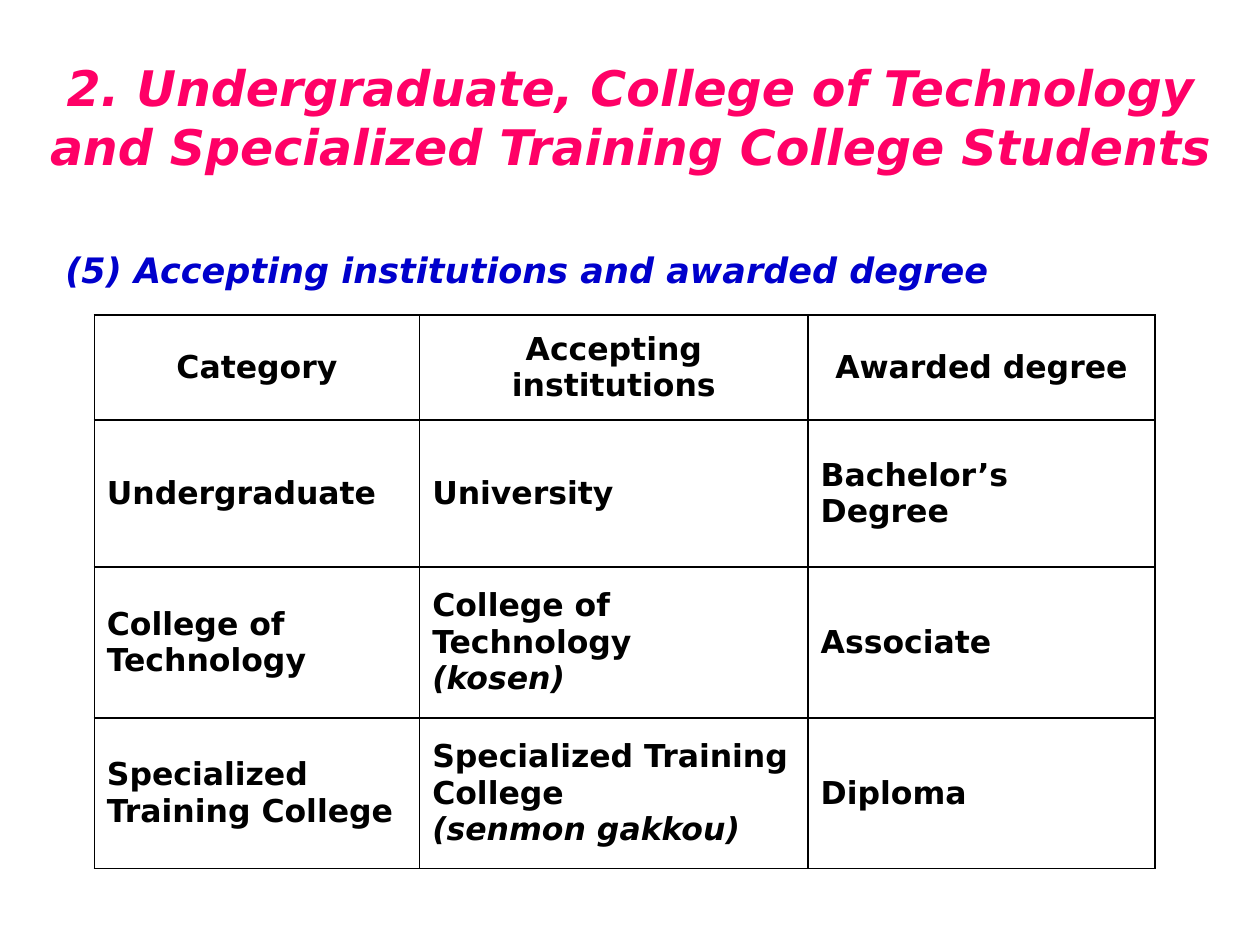
"""Build a slide listing accepting institutions and the degrees they award."""
from dataclasses import dataclass

from lxml.etree import SubElement
from pptx import Presentation
from pptx.dml.color import RGBColor
from pptx.enum.text import MSO_ANCHOR as Anchor, PP_ALIGN as Align
from pptx.oxml.ns import qn
from pptx.util import Cm, Pt

FONT = "DejaVu Sans"
COLUMN_WIDTHS = (6.56, 7.83, 6.99)
ROW_HEIGHTS = (2.12, 2.96, 3.04, 3.04)
ROWS = (
    ("Category", "Accepting institutions", "Awarded degree"),
    ("Undergraduate", "University", "Bachelor’s Degree"),
    ("College of Technology", "College of Technology\n(kosen)", "Associate"),
    ("Specialized Training College",
     "Specialized Training College\n(senmon gakkou)", "Diploma"),
)


@dataclass(frozen=True)
class Heading:
    text: str
    left: float
    top: float
    width: float
    height: float
    size: int
    color: str
    align: Align = Align.LEFT
    anchor: Anchor = Anchor.TOP
    space_before: float = 0
    hanging: float = 0


HEADINGS = (
    Heading("(5) Accepting institutions and awarded degree",
            1.07, 4.88, 23.7, 1.7, 20, "0000CC", space_before=4, hanging=0.95),
    Heading("2. Undergraduate, College of Technology "
            "and Specialized Training College Students",
            0.64, 0.76, 24.13, 3.18, 28, "FF0066", Align.CENTER, Anchor.MIDDLE),
)


def write(para, text: str, size: int, color: str, italic: bool) -> None:
    span = para.add_run()
    span.text = text
    formats = {"name": FONT, "size": Pt(size), "bold": True, "italic": italic}
    for name, value in formats.items():
        setattr(span.font, name, value)
    span.font.color.rgb = RGBColor.from_string(color)


def draw_heading(page, heading: Heading) -> None:
    box = page.shapes.add_textbox(Cm(heading.left), Cm(heading.top),
                                  Cm(heading.width), Cm(heading.height))
    frame = box.text_frame
    frame.word_wrap = True
    frame.vertical_anchor = heading.anchor
    para = frame.paragraphs[0]
    para.alignment = heading.align
    para.space_before = Pt(heading.space_before)
    if heading.hanging:
        properties = para._p.get_or_add_pPr()
        properties.set("marL", str(Cm(heading.hanging)))
        properties.set("indent", str(-Cm(heading.hanging)))
    write(para, heading.text, heading.size, heading.color, True)


def draw_borders(cell, color: str, width: float) -> None:
    properties = cell._tc.get_or_add_tcPr()
    for side in ("lnL", "lnR", "lnT", "lnB"):
        line = SubElement(properties, qn(f"a:{side}"), w=str(Pt(width)))
        SubElement(SubElement(line, qn("a:solidFill")), qn("a:srgbClr"), val=color)


def fill_cell(cell, text: str, align: Align) -> None:
    draw_borders(cell, "000000", 1)
    cell.fill.background()
    cell.vertical_anchor = Anchor.MIDDLE
    frame = cell.text_frame
    for index, line in enumerate(text.split("\n")):
        para = frame.add_paragraph() if index else frame.paragraphs[0]
        para.alignment = align
        write(para, line, 18, "000000", line.startswith("("))


def draw_table(page, left: float, top: float) -> None:
    table = page.shapes.add_table(
        len(ROWS), len(COLUMN_WIDTHS), Cm(left), Cm(top),
        Cm(sum(COLUMN_WIDTHS)), Cm(sum(ROW_HEIGHTS))).table
    table.horz_banding = False
    table.first_row = False
    for column, width in zip(table.columns, COLUMN_WIDTHS):
        column.width = Cm(width)
    for index, (row, height, texts) in enumerate(zip(table.rows, ROW_HEIGHTS, ROWS)):
        row.height = Cm(height)
        for cell, text in zip(row.cells, texts):
            fill_cell(cell, text, Align.LEFT if index else Align.CENTER)


def main() -> None:
    deck = Presentation()
    deck.slide_width, deck.slide_height = Cm(25.4), Cm(19.05)
    page = deck.slides.add_slide(deck.slide_layouts[6])
    subtitle, title = HEADINGS
    draw_heading(page, subtitle)
    draw_table(page, 1.9, 6.35)
    draw_heading(page, title)
    deck.save("out.pptx")


if __name__ == "__main__":
    main()
